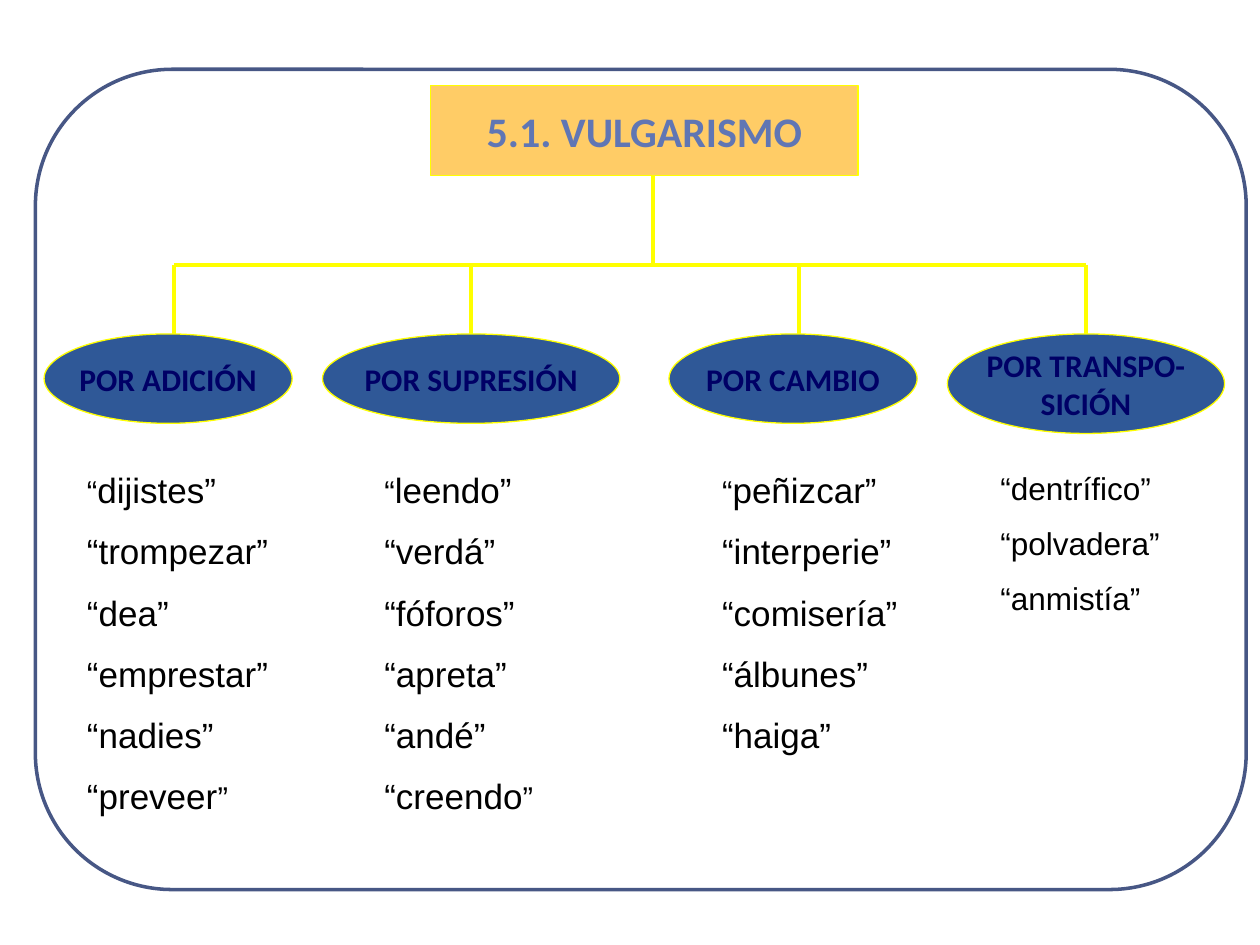
"""Build the slide that sorts vulgarisms into four kinds."""
from dataclasses import dataclass

from lxml import etree
from pptx import Presentation
from pptx.dml.color import RGBColor
from pptx.enum import shapes, text
from pptx.oxml import ns
from pptx.util import Pt

YELLOW = RGBColor(0xFF, 0xFF, 0x00)
AMBER = RGBColor(0xFF, 0xCC, 0x66)
BLUE = RGBColor(0x2F, 0x58, 0x97)
LIGHT_BLUE = RGBColor(0x60, 0x76, 0xB4)
NAVY = RGBColor(0x00, 0x00, 0x66)
FRAME_BLUE = RGBColor(0x47, 0x57, 0x85)
BLACK = RGBColor(0x00, 0x00, 0x00)

COMPARISON_LAYOUT = 4
BAR_Y = 151.2
KIND_TOP = 190.8
TITLE_BOTTOM = 100.1
TITLE_STEM_X = 373
SMALL = 18


@dataclass(frozen=True)
class Box:
    left: float
    top: float
    width: float
    height: float


@dataclass(frozen=True)
class Kind:
    heading: tuple[str, ...]
    oval: Box
    stem_x: float
    words_box: Box
    words: tuple[str, ...]
    size: int = 20
    small_close: bool = False


KINDS = (
    Kind(("POR ADICIÓN",), Box(25.2, KIND_TOP, 141.8, 51.1), 99.4,
         Box(42.5, 264.2, 124.6, 213.1),
         ("dijistes", "trompezar", "dea", "emprestar", "nadies", "preveer"),
         small_close=True),
    Kind(("POR SUPRESIÓN",), Box(184.3, KIND_TOP, 169.9, 51.1), 269.3,
         Box(212.4, 264.2, 124.6, 246.2),
         ("leendo", "verdá", "fóforos", "apreta", "andé", "creendo"),
         small_close=True),
    Kind(("POR CAMBIO",), Box(382.3, KIND_TOP, 141.8, 51.1), 456.5,
         Box(405.4, 264.2, 124.6, 209.5),
         ("peñizcar", "interperie", "comisería", "álbunes", "haiga")),
    Kind(("POR TRANSPO-", "SICIÓN"), Box(541.4, KIND_TOP, 158.4, 56.9), 620.6,
         Box(564.5, 264.2, 124.6, 159.8),
         ("dentrífico", "polvadera", "anmistía"), size=SMALL),
)


def place(shape, box: Box) -> None:
    """Move and size a shape."""
    shape.left, shape.top = Pt(box.left), Pt(box.top)
    shape.width, shape.height = Pt(box.width), Pt(box.height)


def write(shape, lines, *, font: str, color: RGBColor, bold: bool = False,
          align=text.PP_ALIGN.LEFT, anchor=text.MSO_ANCHOR.TOP,
          wrap: bool = True, gap: float = 0) -> None:
    """Fill a shape with lines, each a sequence of (wording, size) pairs."""
    frame = shape.text_frame
    frame.auto_size = text.MSO_AUTO_SIZE.NONE
    frame.word_wrap = wrap
    frame.vertical_anchor = anchor
    for index, line in enumerate(lines):
        para = frame.paragraphs[0] if index == 0 else frame.add_paragraph()
        para.alignment = align
        para.line_spacing = 1.0
        para.space_before = Pt(gap if index else 0)
        properties = para._p.get_or_add_pPr()
        properties.set("marL", "0")
        properties.set("indent", "0")
        etree.SubElement(properties, ns.qn("a:buNone"))
        for wording, size in line:
            span = para.add_run()
            span.text = wording
            span.font.name = font
            span.font.size = Pt(size)
            span.font.bold = bold
            span.font.color.rgb = color


def style_oval(shape, fill: RGBColor) -> None:
    """Give an oval its fill and thin yellow outline."""
    shape.fill.solid()
    shape.fill.fore_color.rgb = fill
    shape.line.color.rgb = YELLOW
    shape.line.width = Pt(0.75)


def write_oval(shape, lines, size: int, color: RGBColor) -> None:
    """Write centred bold lines in an oval."""
    write(shape, [[(line, size)] for line in lines], font="Calibri",
          color=color, bold=True, align=text.PP_ALIGN.CENTER,
          anchor=text.MSO_ANCHOR.MIDDLE, wrap=False)


def draw_title(page) -> None:
    """Turn the title placeholder into the top oval."""
    title = page.shapes.title
    place(title, Box(246.2, 49, 244.1, 51.1))
    geometry = etree.SubElement(title._element.spPr, ns.qn("a:prstGeom"), prst="ellipse")
    etree.SubElement(geometry, ns.qn("a:avLst"))
    style_oval(title, AMBER)
    write_oval(title, ["5.1. VULGARISMO"], 24, LIGHT_BLUE)


def draw_line(page, x1: float, y1: float, x2: float, y2: float) -> None:
    """Draw one yellow line of the tree."""
    line = page.shapes.add_connector(
        shapes.MSO_CONNECTOR.STRAIGHT, Pt(x1), Pt(y1), Pt(x2), Pt(y2))
    line.line.color.rgb = YELLOW
    line.line.width = Pt(2.25)
    etree.SubElement(line._element.spPr, ns.qn("a:effectLst"))


def add_preset(page, preset, box: Box):
    """Add a preset shape without a shadow."""
    shape = page.shapes.add_shape(
        preset, Pt(box.left), Pt(box.top), Pt(box.width), Pt(box.height))
    shape.shadow.inherit = False
    return shape


def word_spans(kind: Kind) -> list:
    """Quote the words, with smaller outer marks where the list has them."""
    lines = [[("“", kind.size), (word, kind.size), ("”", kind.size)]
             for word in kind.words]
    lines[0][0] = ("“", SMALL)
    if kind.small_close:
        lines[-1][-1] = ("”", SMALL)
    return lines


def draw_kind(page, kind: Kind, body) -> None:
    """Draw one branch: oval, stem and word list."""
    oval = add_preset(page, shapes.MSO_SHAPE.OVAL, kind.oval)
    style_oval(oval, BLUE)
    write_oval(oval, kind.heading, 18, NAVY)
    draw_line(page, kind.stem_x, BAR_Y, kind.stem_x, KIND_TOP)
    place(body, kind.words_box)
    write(body, word_spans(kind), font="Arial", color=BLACK, gap=kind.size * 0.55)


def draw_frame(page) -> None:
    """Draw the rounded outline around the tree."""
    frame = add_preset(page, shapes.MSO_SHAPE.ROUNDED_RECTANGLE,
                       Box(20.2, 39.6, 691.9, 468.7))
    frame.fill.background()
    frame.line.color.rgb = FRAME_BLUE
    frame.line.width = Pt(2)


def main() -> None:
    """Build and save the deck."""
    deck = Presentation()
    deck.slide_width, deck.slide_height = Pt(720), Pt(540)
    page = deck.slides.add_slide(deck.slide_layouts[COMPARISON_LAYOUT])
    draw_title(page)
    for index, kind in enumerate(KINDS, start=1):
        draw_kind(page, kind, page.placeholders[index])
    draw_line(page, KINDS[0].stem_x, BAR_Y, KINDS[-1].stem_x, BAR_Y)
    draw_line(page, TITLE_STEM_X, TITLE_BOTTOM, TITLE_STEM_X, BAR_Y)
    draw_frame(page)
    deck.save("out.pptx")


if __name__ == "__main__":
    main()
